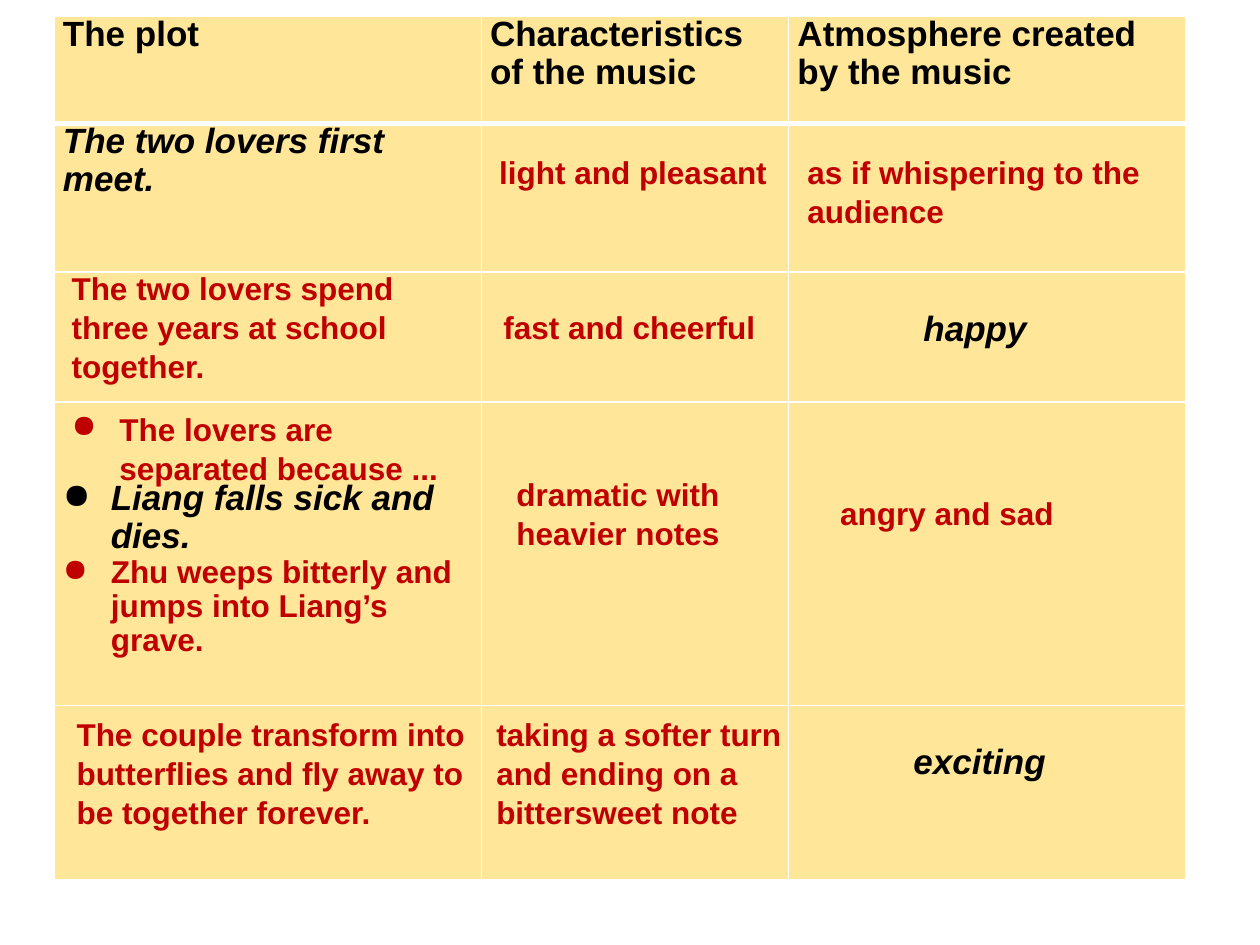
import pptx
import pptx.dml.color
import pptx.enum.text
import pptx.oxml
import pptx.oxml.ns
import pptx.util
from lxml import etree

COLORS = {"cell": "FFE699", "rule": "FFFFFF", "given": "000000", "answer": "C00000"}
ANSWER_SIZE, GIVEN_SIZE = 18, 20
BULLET_INDENT = 0.38
Inches = pptx.util.Inches


def write(p, text, kind, size, italic=False, bullet=False, spacing=1.0):
    """Fill one paragraph and format its run."""
    p.text = text
    p.line_spacing = spacing
    if bullet:
        pPr = p._p.get_or_add_pPr()
        indent = Inches(BULLET_INDENT)
        pPr.set("marL", str(indent))
        pPr.set("indent", str(-indent))
        bu = etree.SubElement(pPr, pptx.oxml.ns.qn("a:buChar"))
        bu.set("char", "●")
    font = p.runs[0].font
    font.name, font.size = "Arial", pptx.util.Pt(size)
    font.bold, font.italic = True, italic
    font.color.rgb = pptx.dml.color.RGBColor.from_string(COLORS[kind])


def add_border(tcPr, side, width):
    """Draw one side of a cell."""
    ln = etree.SubElement(tcPr, pptx.oxml.ns.qn("a:" + side))
    ln.set("w", str(pptx.util.Pt(width)))
    fill = etree.SubElement(ln, pptx.oxml.ns.qn("a:solidFill"))
    etree.SubElement(fill, pptx.oxml.ns.qn("a:srgbClr")).set("val", COLORS["rule"])


prs = pptx.Presentation()
prs.slide_width, prs.slide_height = Inches(10), Inches(7.5)
s = prs.slides.add_slide(prs.slide_layouts[6])

# Grid
left, top = 0.43, 0.13
widths = [3.39, 2.44, 3.15]
heights = [0.85, 1.18, 1.03, 2.41, 1.38]
col_x = [left + sum(widths[:i]) for i in range(len(widths))]
row_y = [top + sum(heights[:i]) for i in range(len(heights))]

# Table
frame = s.shapes.add_table(len(heights), len(widths), Inches(left), Inches(top),
                           Inches(sum(widths)), Inches(sum(heights)))
table = frame.table
table.horz_banding = table.first_row = False
for column, width in zip(table.columns, widths):
    column.width = Inches(width)
for row, height in zip(table.rows, heights):
    row.height = Inches(height)
for r, row in enumerate(table.rows):
    for cell in row.cells:
        cell.margin_left = cell.margin_right = Inches(0.07)
        cell.margin_top = cell.margin_bottom = 0
        tcPr = cell._tc.get_or_add_tcPr()
        for side in ("lnL", "lnR", "lnT", "lnB"):
            heavy = (r, side) in ((0, "lnB"), (1, "lnT"))
            add_border(tcPr, side, 3 if heavy else 1)
        cell.fill.solid()
        cell.fill.fore_color.rgb = pptx.dml.color.RGBColor.from_string(COLORS["cell"])

# Headings
headings = ["The plot", "Characteristics of the music", "Atmosphere created by the music"]
for c, heading in enumerate(headings):
    write(table.cell(0, c).text_frame.paragraphs[0], heading, "given", GIVEN_SIZE, spacing=0.97)

# Given entries: row, column, left margin, top margin, text
given = [
    (1, 0, 0.07, 0, "The two lovers first meet."),
    (2, 2, 1.07, 0.31, "happy"),
    (3, 0, 0.07, 0.62, "Liang falls sick and dies."),
    (4, 2, 0.99, 0.31, "exciting"),
]
for r, c, margin_left, margin_top, text in given:
    cell = table.cell(r, c)
    cell.margin_left, cell.margin_top = Inches(margin_left), Inches(margin_top)
    write(cell.text_frame.paragraphs[0], text, "given", GIVEN_SIZE,
          italic=True, bullet=(r == 3), spacing=0.97)
write(table.cell(3, 0).text_frame.add_paragraph(),
      "Zhu weeps bitterly and jumps into Liang’s grave.",
      "answer", ANSWER_SIZE, bullet=True, spacing=0.97)

# Answers over the grid: row, column, offset from the cell, width, height, centred, text
answers = [
    (1, 1, -0.43, 0.17, 3.27, 0.4, True, "light and pleasant"),
    (1, 2, 0.05, 0.17, 2.98, 0.71, False, "as if whispering to the audience"),
    (2, 0, 0.04, -0.09, 3.27, 1.01, False,
     "The two lovers spend three years at school together."),
    (2, 1, -0.01, 0.22, 2.37, 0.4, True, "fast and cheerful"),
    (3, 0, 0.04, 0, 3.27, 0.71, False, "The lovers are separated because ..."),
    (3, 1, 0.18, 0.52, 2.68, 0.71, False, "dramatic with heavier notes"),
    (3, 2, 0.31, 0.67, 2.2, 0.4, False, "angry and sad"),
    (4, 0, 0.08, 0.01, 3.33, 1.35, False,
     "The couple transform into butterflies and fly away to be together forever."),
    (4, 1, 0.02, 0.01, 2.68, 1.01, False,
     "taking a softer turn and ending on a bittersweet note"),
]
for r, c, dx, dy, width, height, centred, text in answers:
    sp = s.shapes.add_textbox(Inches(col_x[c] + dx), Inches(row_y[r] + dy),
                              Inches(width), Inches(height))
    tf = sp.text_frame
    tf.word_wrap = True
    p = tf.paragraphs[0]
    write(p, text, "answer", ANSWER_SIZE, bullet=(r == 3 and c == 0), spacing=1.04)
    if centred:
        p.alignment = pptx.enum.text.PP_ALIGN.CENTER

prs.save("out.pptx")
